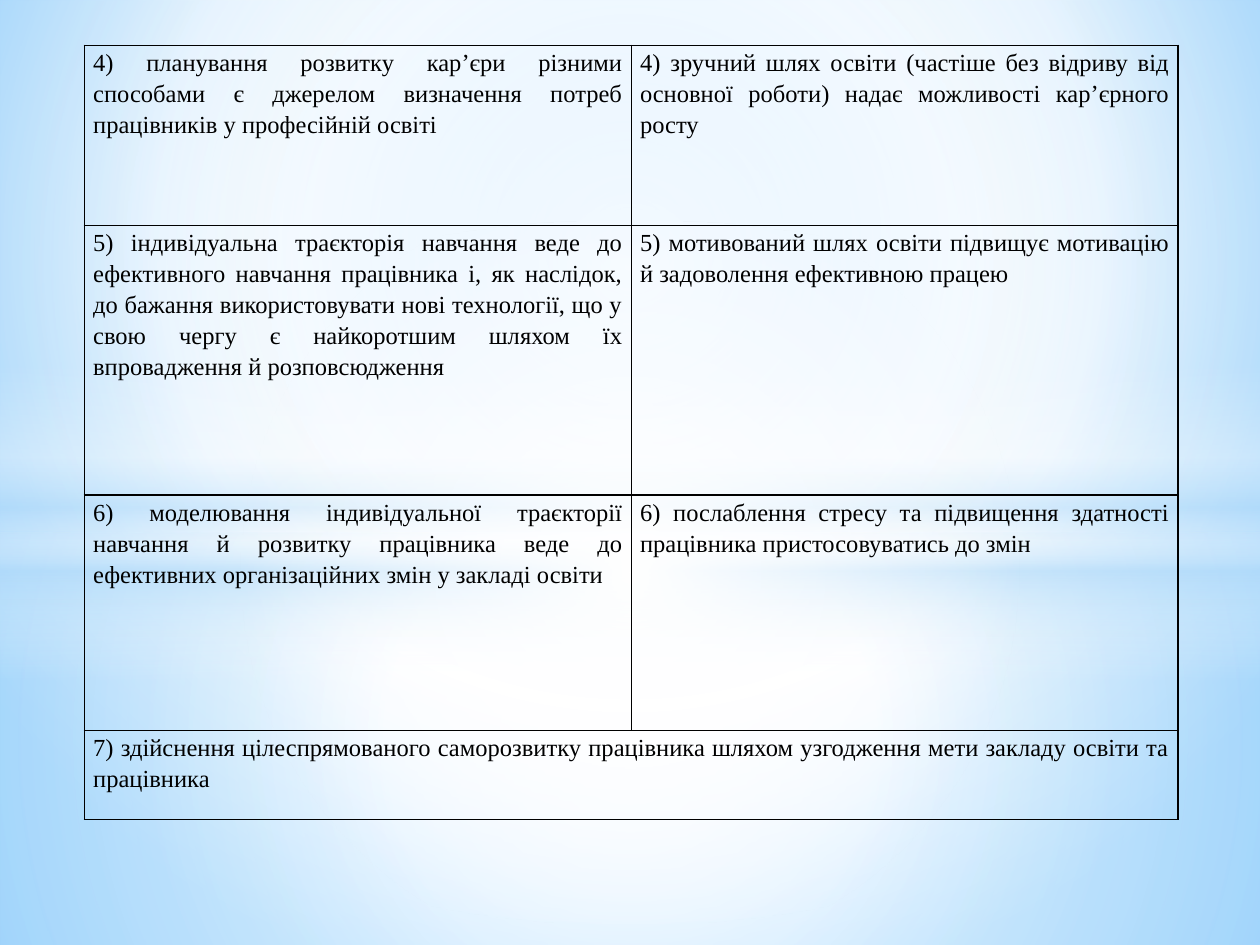
from dataclasses import dataclass

from lxml import etree
from pptx import Presentation
from pptx.dml.color import RGBColor
from pptx.enum.shapes import MSO_SHAPE as Shape
from pptx.enum.text import PP_ALIGN as Align
from pptx.oxml.ns import qn
from pptx.util import Pt


@dataclass(frozen=True)
class Theme:
    white: str = "FFFFFF"
    haze: str = "B4DCFA"
    sky: str = "9ED5FF"
    deep_sky: str = "5BB9FF"
    ink: str = "000000"
    font: str = "Times New Roman"
    body_size: float = 14
    line_spacing: float = 1.15
    border: float = 1


THEME = Theme()
SLIDE_WIDTH, SLIDE_HEIGHT = 720, 540
HORIZON = 304.5
CENTRE = (50, 50, 50, 50)

STATEMENTS = [
    (103, "4) планування розвитку кар’єри різними способами є джерелом визначення потреб працівників у професійній освіті",
     "4) зручний шлях освіти (частіше без відриву від основної роботи) надає можливості кар’єрного росту"),
    (154, "5) індивідуальна траєкторія навчання веде до ефективного навчання працівника і, як наслідок, до бажання використовувати нові технології, що у свою чергу є найкоротшим шляхом їх впровадження й розповсюдження",
     "5) мотивований шлях освіти підвищує мотивацію й задоволення ефективною працею"),
    (134.5, "6) моделювання індивідуальної траєкторії навчання й розвитку працівника веде до ефективних організаційних змін у закладі освіти",
     "6) послаблення стресу та підвищення здатності працівника пристосовуватись до змін"),
    (51, "7) здійснення цілеспрямованого саморозвитку працівника шляхом узгодження мети закладу освіти та працівника",
     None),
]


def add_node(parent, tag, **values):
    return etree.SubElement(parent, qn(tag), {key: str(value) for key, value in values.items()})


def paint_gradient(fill, stops, focus=None):
    fill.solid()
    holder = fill._xPr
    solid = holder.find(qn("a:solidFill"))
    gradient = etree.Element(qn("a:gradFill"), rotWithShape="1")
    stop_list = add_node(gradient, "a:gsLst")
    for position, colour, opacity in stops:
        stop = add_node(stop_list, "a:gs", pos=position * 1000)
        tint = add_node(stop, "a:srgbClr", val=colour)
        if opacity < 100:
            add_node(tint, "a:alpha", val=opacity * 1000)
    if focus:
        circle = add_node(gradient, "a:path", path="circle")
        add_node(circle, "a:fillToRect",
                 **{side: inset * 1000 for side, inset in zip("ltrb", focus)})
    else:
        add_node(gradient, "a:lin", ang=90 * 60000, scaled=0)
    holder.replace(solid, gradient)


def add_glow(slide, outline, top, height, stops, focus=CENTRE):
    glow = slide.shapes.add_shape(outline, 0, Pt(top), Pt(SLIDE_WIDTH), Pt(height))
    glow.shadow.inherit = False
    glow.line.fill.background()
    paint_gradient(glow.fill, stops, focus)


def add_sky(slide):
    white, haze = THEME.white, THEME.haze
    paint_gradient(slide.background.fill,
                   [(0, THEME.sky, 100), (60, white, 100), (100, THEME.deep_sky, 100)],
                   (20, 10, 20, 60))
    add_glow(slide, Shape.RECTANGLE, HORIZON, SLIDE_HEIGHT - HORIZON,
             [(0, white, 91), (37, white, 76), (100, haze, 79)])
    add_glow(slide, Shape.RECTANGLE, 0, HORIZON,
             [(0, white, 89), (48, white, 62), (100, haze, 79)])
    add_glow(slide, Shape.RECTANGLE, 209, 180,
             [(0, white, 0), (29, white, 30), (45, haze, 40),
              (55, white, 26), (65, haze, 60), (100, white, 0)], focus=None)
    add_glow(slide, Shape.OVAL, 126, 402, [(0, white, 100), (54, white, 0)])


def draw_borders(cell):
    properties = cell._tc.get_or_add_tcPr()
    for index, edge in enumerate(("a:lnL", "a:lnR", "a:lnT", "a:lnB")):
        border = etree.Element(qn(edge), w=str(Pt(THEME.border)))
        add_node(add_node(border, "a:solidFill"), "a:srgbClr", val=THEME.ink)
        properties.insert(index, border)


def style_cell(cell):
    margins = {"margin_left": Pt(5), "margin_right": Pt(5), "margin_top": 0, "margin_bottom": 0}
    for name, value in margins.items():
        setattr(cell, name, value)
    cell.fill.background()
    draw_borders(cell)


def write_statement(cell, statement):
    paragraph = cell.text_frame.paragraphs[0]
    for name, value in {"alignment": Align.JUSTIFY, "line_spacing": THEME.line_spacing}.items():
        setattr(paragraph, name, value)
    run = paragraph.add_run()
    run.text = statement
    for name, value in {"name": THEME.font, "size": Pt(THEME.body_size), "bold": False}.items():
        setattr(run.font, name, value)
    run.font.color.rgb = RGBColor.from_string(THEME.ink)


def add_statements(slide, left, top, column_width):
    total_height = sum(height for height, *_ in STATEMENTS)
    table = slide.shapes.add_table(len(STATEMENTS), 2, Pt(left), Pt(top),
                                   Pt(2 * column_width), Pt(total_height)).table
    for flag in ("first_row", "horz_banding"):
        setattr(table, flag, False)
    for column in table.columns:
        column.width = Pt(column_width)
    for row, (height, *statements) in zip(table.rows, STATEMENTS):
        row.height = Pt(height)
        cells = list(row.cells)
        if statements[1] is None:
            cells[0].merge(cells[1])
        for cell, statement in zip(cells, statements):
            style_cell(cell)
            if statement:
                write_statement(cell, statement)


def main():
    deck = Presentation()
    deck.slide_width, deck.slide_height = Pt(SLIDE_WIDTH), Pt(SLIDE_HEIGHT)
    slide = deck.slides.add_slide(deck.slide_layouts[6])
    add_sky(slide)
    add_statements(slide, left=48.25, top=26, column_width=312.5)
    deck.save("out.pptx")


if __name__ == "__main__":
    main()
